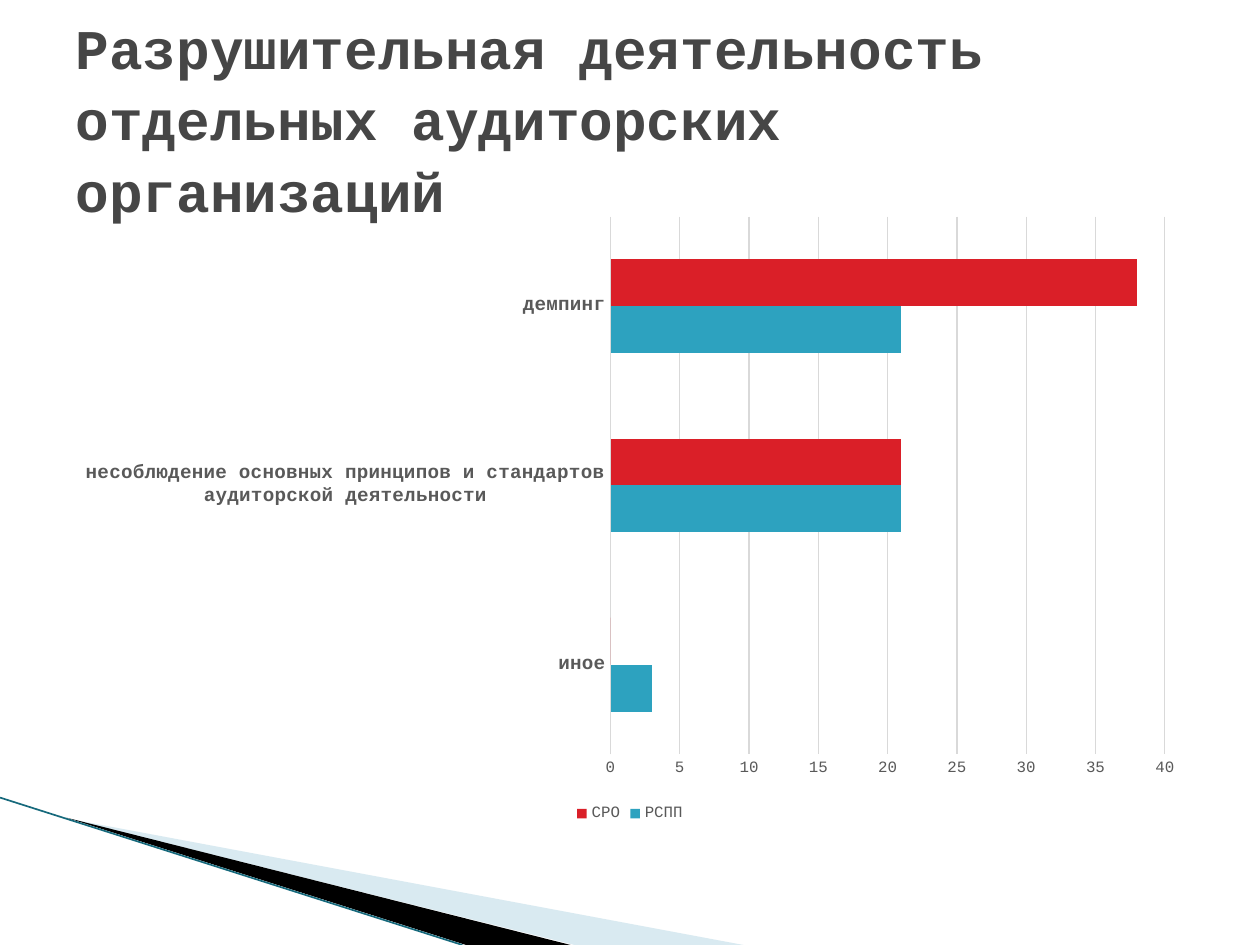
"""Build a slide with a title, a clustered bar chart and a corner decoration."""
import pptx
import pptx.chart.data
import pptx.dml.color
import pptx.enum.chart
import pptx.enum.text
import pptx.oxml
import pptx.oxml.ns
import pptx.util

Inches = pptx.util.Inches
Pt = pptx.util.Pt
RGBColor = pptx.dml.color.RGBColor

FONT = "Courier New"
TITLE_GRAY = RGBColor(0x46, 0x46, 0x46)
LABEL_GRAY = RGBColor(0x59, 0x59, 0x59)
GRID_GRAY = RGBColor(0xD9, 0xD9, 0xD9)
BLACK = RGBColor(0, 0, 0)
PALE_BLUE = RGBColor(0xA0, 0xCB, 0xDC)
DARK_TEAL = RGBColor(0x16, 0x69, 0x7C)
TEAL = RGBColor(0x2D, 0xA2, 0xBF)
RED = RGBColor(0xDA, 0x1F, 0x28)

CATEGORIES = [
    "иное",
    "несоблюдение основных принципов и стандартов аудиторской деятельности",
    "демпинг",
]
SERIES = [("РСПП", (3, 21, 21), TEAL), ("СРО", (0, 21, 38), RED)]


def set_font(font, size, color, bold=False):
    """Apply the slide typeface with a size, colour and weight."""
    font.name = FONT
    font.size = Pt(size)
    font.bold = bold
    font.color.rgb = color


def write_text(tf, text, size=18, color=BLACK, bold=False, spacing=1.0,
               align=pptx.enum.text.PP_ALIGN.LEFT,
               anchor=pptx.enum.text.MSO_ANCHOR.MIDDLE):
    """Write one formatted paragraph into a text frame."""
    tf.word_wrap = True
    tf.auto_size = pptx.enum.text.MSO_AUTO_SIZE.NONE
    tf.vertical_anchor = anchor
    p = tf.paragraphs[0]
    p.alignment = align
    p.line_spacing = spacing
    r = p.add_run()
    r.text = text
    set_font(r.font, size, color, bold)


def add_title(s, text):
    """Place and fill the title placeholder."""
    sp = s.shapes.title
    sp.left, sp.top = Inches(0.5), Inches(0.3)
    sp.width, sp.height = Inches(9), Inches(1.25)
    write_text(sp.text_frame, text, size=32, color=TITLE_GRAY, bold=True, spacing=1.06)


def add_wedge(s, points, color, opacity=100):
    """Draw a filled polygon without an outline."""
    corners = [(Inches(x), Inches(y)) for x, y in points]
    builder = s.shapes.build_freeform(*corners[0], scale=1.0)
    builder.add_line_segments(corners[1:], close=True)
    sp = builder.convert_to_shape()
    sp.shadow.inherit = False
    sp.line.fill.background()
    sp.fill.solid()
    sp.fill.fore_color.rgb = color
    if opacity < 100:
        clr = sp.fill._xPr.find(".//" + pptx.oxml.ns.qn("a:srgbClr"))
        alpha = pptx.oxml.parse_xml(
            f'<a:alpha {pptx.oxml.ns.nsdecls("a")} val="{opacity * 1000}"/>')
        clr.append(alpha)


def add_line(s, start, end, color, width):
    """Draw a straight line without a shadow."""
    x1, y1, x2, y2 = map(Inches, start + end)
    sp = s.shapes.add_connector(pptx.enum.shapes.MSO_CONNECTOR.STRAIGHT, x1, y1, x2, y2)
    sp.line.color.rgb = color
    sp.line.width = Pt(width)
    effects = pptx.oxml.parse_xml(f'<a:effectLst {pptx.oxml.ns.nsdecls("a")}/>')
    sp._element.spPr.append(effects)


def format_axis(axis, size, bold=False):
    """Remove tick marks and set the label font."""
    axis.major_tick_mark = pptx.enum.chart.XL_TICK_MARK.NONE
    axis.minor_tick_mark = pptx.enum.chart.XL_TICK_MARK.NONE
    set_font(axis.tick_labels.font, size, LABEL_GRAY, bold)


def add_bar_chart(s):
    """Add the clustered bar chart with its axes and legend."""
    data = pptx.chart.data.CategoryChartData()
    data.categories = CATEGORIES
    for name, values, _ in SERIES:
        data.add_series(name, values)
    chart = s.shapes.add_chart(
        pptx.enum.chart.XL_CHART_TYPE.BAR_CLUSTERED,
        Inches(0.5), Inches(1.62), Inches(9), Inches(4.95), data).chart
    set_font(chart.font, 10, BLACK)
    chart.has_title = False

    plot = chart.plots[0]
    plot.gap_width = 182
    plot.overlap = 0
    plot.vary_by_categories = False
    for series, (_, _, color) in zip(plot.series, SERIES):
        series.format.fill.solid()
        series.format.fill.fore_color.rgb = color
        series.invert_if_negative = False

    cat, val = chart.category_axis, chart.value_axis
    format_axis(cat, 11, bold=True)
    format_axis(val, 9)
    val.minimum_scale, val.maximum_scale, val.major_unit = 0, 40, 5
    val.format.line.fill.background()
    val.has_major_gridlines = True
    for line in (cat.format.line, val.major_gridlines.format.line):
        line.color.rgb = GRID_GRAY
        line.width = Pt(0.75)

    chart.has_legend = True
    chart.legend.position = pptx.enum.chart.XL_LEGEND_POSITION.BOTTOM
    chart.legend.include_in_layout = False
    set_font(chart.legend.font, 9, LABEL_GRAY)


def main():
    """Assemble and save the slide."""
    prs = pptx.Presentation()
    prs.slide_width, prs.slide_height = Inches(10), Inches(7.5)
    s = prs.slides.add_slide(prs.slide_layouts[5])
    add_wedge(s, [(0.55, 6.5), (5.9, 7.5), (4.56, 7.5)], PALE_BLUE, opacity=40)
    add_wedge(s, [(0.53, 6.49), (4.53, 7.5), (3.7, 7.5)], BLACK)
    add_line(s, (0, 6.33), (3.67, 7.5), DARK_TEAL, 0.95)
    add_title(s, "Разрушительная деятельность отдельных аудиторских организаций")
    add_bar_chart(s)
    prs.save("out.pptx")


if __name__ == "__main__":
    main()
